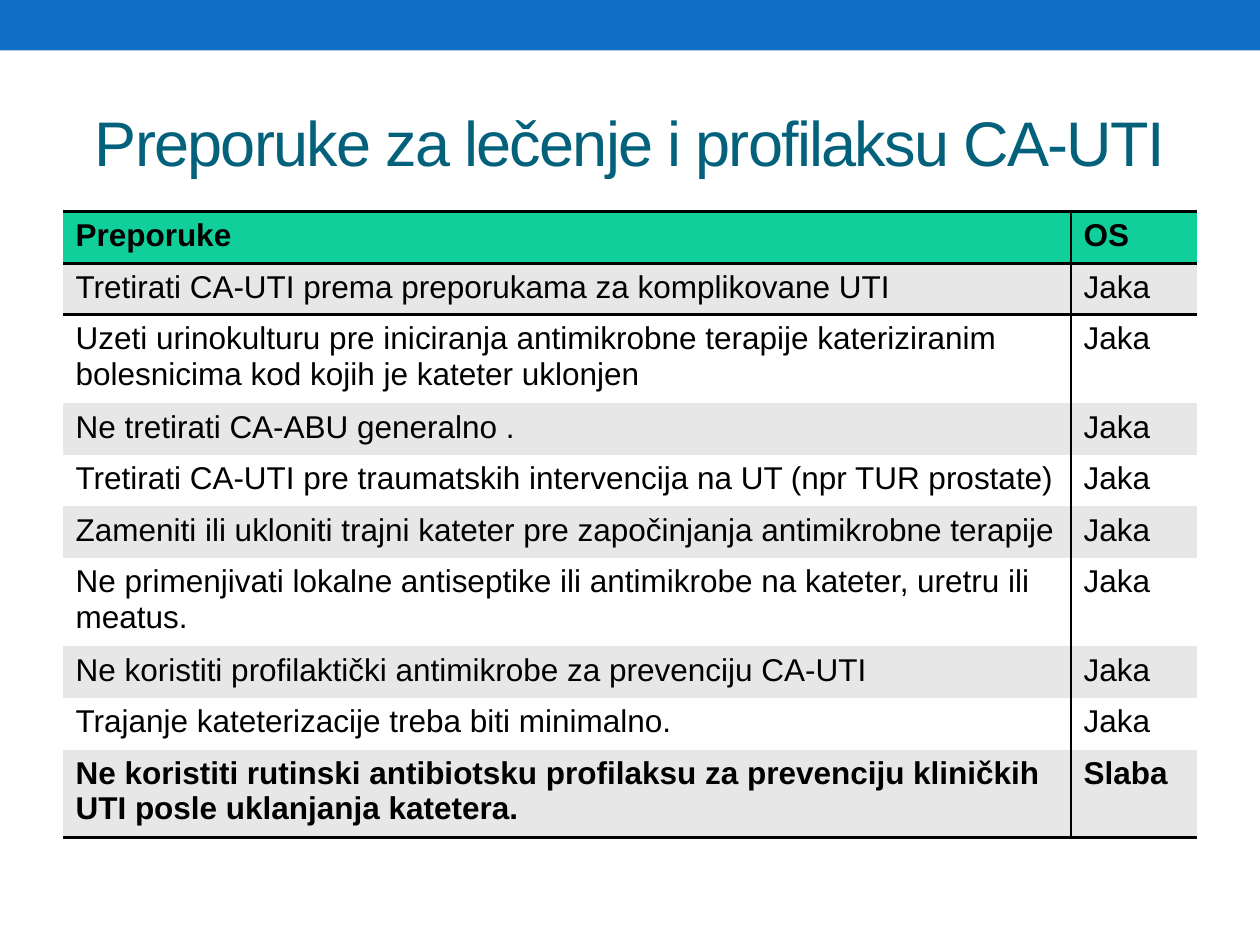
"""Build a slide with a table of recommendations for CA-UTI."""
from lxml.etree import SubElement
from pptx import Presentation
from pptx.dml.color import RGBColor
from pptx.enum.shapes import MSO_SHAPE
from pptx.enum.text import MSO_ANCHOR, PP_ALIGN
from pptx.oxml.ns import qn
from pptx.util import Inches, Pt

COLORS = {
    "bar": "0F6FC6",
    "title": "04617B",
    "header": "10CF9B",
    "band": "E7E7E7",
    "plain": "FFFFFF",
    "ink": "000000",
}
NO_GRID_STYLE = "{2D5ABB26-0587-4C30-8999-92F81FD0307C}"
ROWS = [
    ("Preporuke", "OS"),
    ("Tretirati CA-UTI prema preporukama za komplikovane UTI", "Jaka"),
    ("Uzeti urinokulturu pre iniciranja antimikrobne terapije kateriziranim "
     "bolesnicima kod kojih je kateter uklonjen", "Jaka"),
    ("Ne tretirati CA-ABU generalno .", "Jaka"),
    ("Tretirati CA-UTI pre traumatskih intervencija na UT (npr TUR prostate)", "Jaka"),
    ("Zameniti ili ukloniti trajni kateter pre započinjanja antimikrobne terapije", "Jaka"),
    ("Ne primenjivati lokalne antiseptike ili antimikrobe na kateter, uretru ili meatus.", "Jaka"),
    ("Ne koristiti profilaktički antimikrobe za prevenciju CA-UTI", "Jaka"),
    ("Trajanje kateterizacije treba biti minimalno.", "Jaka"),
    ("Ne koristiti rutinski antibiotsku profilaksu za prevenciju kliničkih UTI "
     "posle uklanjanja katetera.", "Slaba"),
]


def write(tf, text, size=18, color="ink", bold=False, align=PP_ALIGN.LEFT, spacing=0):
    tf.word_wrap = True
    p = tf.paragraphs[0]
    p.alignment = align
    r = p.add_run()
    r.text = text
    r.font.name = "Arial"
    r.font.size = Pt(size)
    r.font.bold = bold
    r.font.color.rgb = RGBColor.from_string(COLORS[color])
    if spacing:
        r.font._element.set("spc", str(spacing * 100))


def add_border(cell, side, width):
    ln = SubElement(cell._tc.get_or_add_tcPr(), qn(f"a:ln{side}"), w=str(Pt(width)))
    fill = SubElement(ln, qn("a:solidFill"))
    SubElement(fill, qn("a:srgbClr"), val=COLORS["ink"])


prs = Presentation()
prs.slide_width, prs.slide_height = Inches(10), Inches(7.5)
s = prs.slides.add_slide(prs.slide_layouts[6])

bar = s.shapes.add_shape(MSO_SHAPE.RECTANGLE, 0, 0, prs.slide_width, Inches(0.4))
bar.shadow.inherit = False
bar.fill.solid()
bar.fill.fore_color.rgb = RGBColor.from_string(COLORS["bar"])
bar.line.fill.background()

title = s.shapes.add_textbox(Inches(0.5), Inches(0.58), Inches(9), Inches(1.08))
title.text_frame.vertical_anchor = MSO_ANCHOR.MIDDLE
write(title.text_frame, "Preporuke za lečenje i profilaksu CA-UTI",
      size=36, color="title", align=PP_ALIGN.CENTER, spacing=-1)

row_height = Inches(0.41)
last = len(ROWS) - 1
frame = s.shapes.add_table(len(ROWS), 2, Inches(0.5), Inches(1.68),
                           Inches(9), row_height * len(ROWS))
table = frame.table
table._tbl.tblPr.find(qn("a:tableStyleId")).text = NO_GRID_STYLE
table.columns[0].width, table.columns[1].width = Inches(8), Inches(1)

for i, texts in enumerate(ROWS):
    table.rows[i].height = row_height
    fill = "header" if i == 0 else "band" if i % 2 else "plain"
    for j, text in enumerate(texts):
        cell = table.cell(i, j)
        write(cell.text_frame, text, bold=i in (0, last))
        add_border(cell, "L" if j else "R", 1)
        if i < 2:
            add_border(cell, "T", 2)
        if i in (0, last):
            add_border(cell, "B", 2)
        cell.fill.solid()
        cell.fill.fore_color.rgb = RGBColor.from_string(COLORS[fill])

prs.save("out.pptx")
